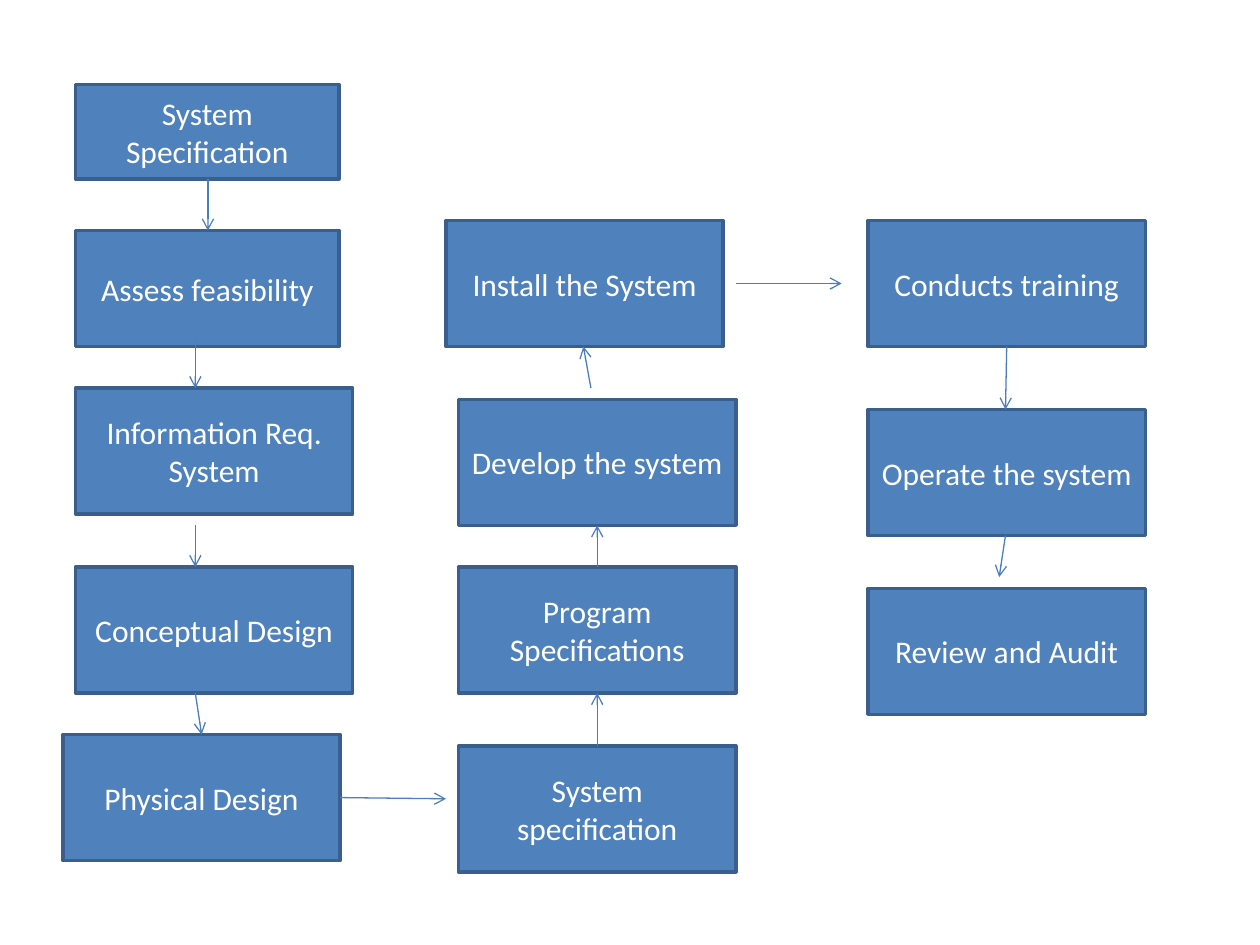
from lxml import etree
from pptx import Presentation
from pptx.dml.color import RGBColor
from pptx.enum.shapes import MSO_CONNECTOR, MSO_SHAPE
from pptx.enum.text import MSO_ANCHOR, PP_ALIGN
from pptx.oxml.ns import qn
from pptx.util import Inches, Pt

RECTANGLE = MSO_SHAPE.RECTANGLE
STRAIGHT = MSO_CONNECTOR.STRAIGHT
MIDDLE = MSO_ANCHOR.MIDDLE
CENTER = PP_ALIGN.CENTER

STEP_FILL = RGBColor(0x4F, 0x81, 0xBD)
STEP_BORDER = RGBColor(0x3A, 0x5F, 0x8C)
ARROW_COLOR = RGBColor(0x4B, 0x7E, 0xBC)
WHITE = RGBColor(0xFF, 0xFF, 0xFF)

STEP_SIZE = (2.2, 1)
NARROW_WIDTH = 2.09

# Steps in process order: text, left, top, (width, height)
STEPS = [
    ("System Specification", 0.6, 0.67, (NARROW_WIDTH, 0.75)),
    ("Assess feasibility", 0.6, 1.83, (NARROW_WIDTH, 0.92)),
    ("Information Req. System", 0.6, 3.08, STEP_SIZE),
    ("Conceptual Design", 0.6, 4.5, STEP_SIZE),
    ("Physical Design", 0.5, 5.83, STEP_SIZE),
    ("System specification", 3.64, 5.92, STEP_SIZE),
    ("Program Specifications", 3.64, 4.5, STEP_SIZE),
    ("Develop the system", 3.64, 3.17, STEP_SIZE),
    ("Install the System", 3.54, 1.75, STEP_SIZE),
    ("Conducts training", 6.89, 1.75, STEP_SIZE),
    ("Operate the system", 6.89, 3.25, STEP_SIZE),
    ("Review and Audit", 6.89, 4.67, STEP_SIZE),
]

# Arrows from each step to the next: start, end
ARROWS = [
    ((1.65, 1.42), (1.65, 1.83)),
    ((1.55, 2.67), (1.55, 3.08)),
    ((1.55, 4.17), (1.55, 4.5)),
    ((1.55, 5.5), (1.6, 5.83)),
    ((2.7, 6.33), (3.54, 6.34)),
    ((4.74, 5.92), (4.74, 5.5)),
    ((4.74, 4.5), (4.74, 4.17)),
    ((4.69, 3.08), (4.63, 2.75)),
    ((5.84, 2.25), (6.68, 2.25)),
    ((7.99, 2.75), (7.98, 3.25)),
    ((7.98, 4.25), (7.93, 4.58)),
]


def add_step(shapes, text, left, top, size):
    step = shapes.add_shape(RECTANGLE, *map(Inches, (left, top, *size)))
    step.shadow.inherit = False
    step.fill.solid()
    step.fill.fore_color.rgb = STEP_FILL
    step.line.color.rgb = STEP_BORDER
    step.line.width = Pt(2)
    frame = step.text_frame
    frame.text = text
    frame.word_wrap = True
    frame.vertical_anchor = MIDDLE
    paragraph = frame.paragraphs[0]
    paragraph.alignment = CENTER
    font = paragraph.runs[0].font
    font.name = "Calibri"
    font.size = Pt(18)
    font.color.rgb = WHITE


def add_arrow(shapes, start, end):
    arrow = shapes.add_connector(STRAIGHT, *map(Inches, start + end))
    arrow.line.color.rgb = ARROW_COLOR
    arrow.line.width = Pt(0.75)
    # Open arrowhead at the end, and no shadow
    etree.SubElement(arrow.line._get_or_add_ln(), qn("a:tailEnd"), type="arrow")
    etree.SubElement(arrow._element.spPr, qn("a:effectLst"))


def main():
    prs = Presentation()
    prs.slide_width, prs.slide_height = Inches(10), Inches(7.5)
    slide = prs.slides.add_slide(prs.slide_layouts[6])

    # The whole flowchart is one group
    flowchart = slide.shapes.add_group_shape().shapes
    for step in STEPS:
        add_step(flowchart, *step)
    for start, end in ARROWS:
        add_arrow(flowchart, start, end)

    prs.save("out.pptx")


if __name__ == "__main__":
    main()
